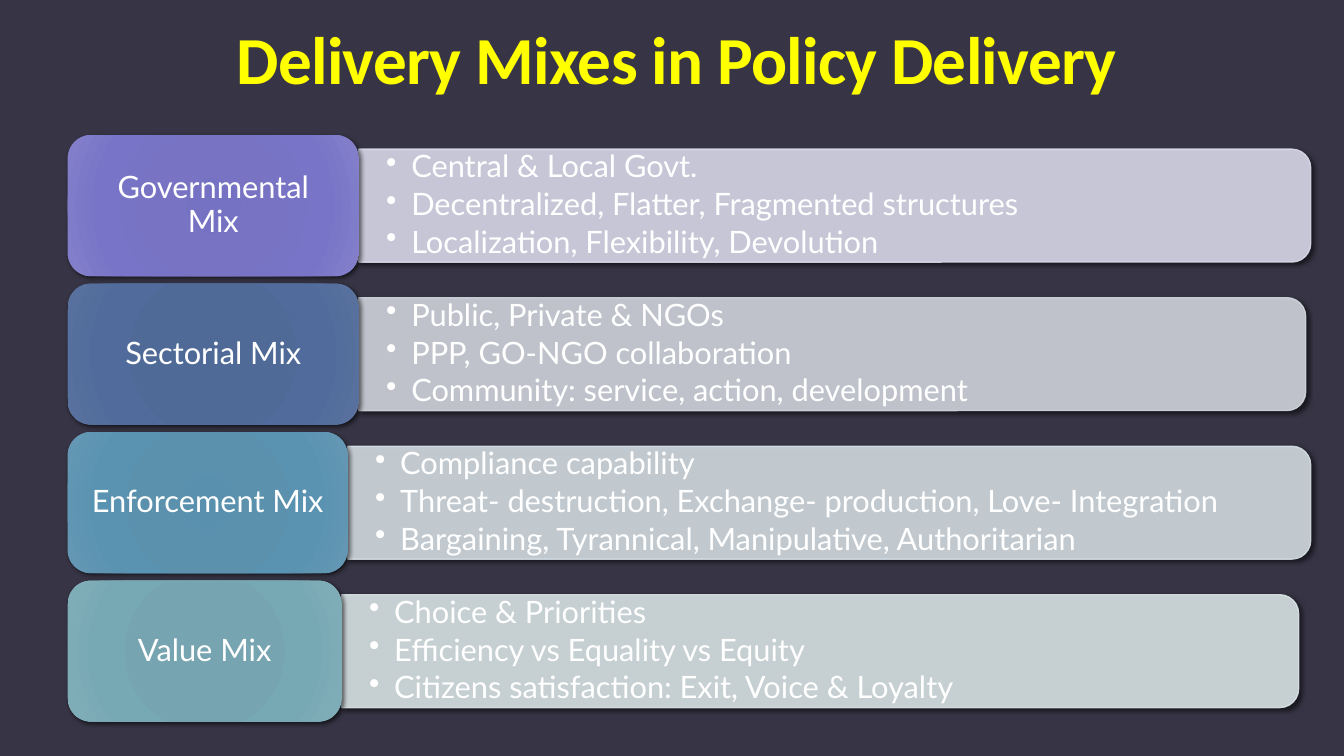
from pptx import Presentation
from pptx.dml.color import RGBColor
from pptx.enum.shapes import MSO_SHAPE
from pptx.enum.text import MSO_ANCHOR, PP_ALIGN
from pptx.oxml import parse_xml
from pptx.oxml.ns import nsdecls
from pptx.util import Inches, Pt

ROUNDED = MSO_SHAPE.ROUNDED_RECTANGLE
TOP_ROUNDED = MSO_SHAPE.ROUND_2_SAME_RECTANGLE
MIDDLE, BOTTOM = MSO_ANCHOR.MIDDLE, MSO_ANCHOR.BOTTOM
CENTER = PP_ALIGN.CENTER

COLORS = {"background": "373545", "title": "FFFF00", "text": "FFFFFF", "shadow": "000000"}
LEFT, FIRST_MIDDLE, ROW_PITCH = 0.67, 2.04, 1.4733
LABEL_HEIGHT, PANEL_HEIGHT, TEXT_HEIGHT = 1.4, 1.12, 1.01
STOPS = (0, 34, 70, 100)

MIXES = [
    ("Governmental Mix", 2.89, 9.44, "D9D9EB", ("7572C3", "7874C3", "7874C8", "8481CA"),
     ("Central & Local Govt.",
      "Decentralized, Flatter, Fragmented structures",
      "Localization, Flexibility, Devolution")),
    ("Sectorial Mix", 2.89, 9.39, "D2D5DE", ("4E6998", "506A98", "506B9C", "5A729D"),
     ("Public, Private & NGOs",
      "PPP, GO-NGO collaboration",
      "Community: service, action, development")),
    ("Enforcement Mix", 2.78, 9.55, "D4DDE3", ("5890AD", "5B91AD", "5A93B1", "6698B3"),
     ("Compliance capability",
      "Threat- destruction, Exchange- production, Love- Integration",
      "Bargaining, Tyrannical, Manipulative, Authoritarian")),
    ("Value Mix", 2.72, 9.49, "D9E3E5", ("74A4B1", "76A5B1", "77A9B5", "82AEB8"),
     ("Choice & Priorities",
      "Efficiency vs Equality vs Equity",
      "Citizens satisfaction: Exit, Voice & Loyalty")),
]


def cast_shadow(shape, blur):
    shape.shadow.inherit = False
    effects = shape._element.spPr.find("{*}effectLst")
    effects.append(parse_xml(
        f'<a:outerShdw {nsdecls("a")} blurRad="{Pt(blur)}" dist="{Pt(2)}" dir="2700000" '
        f'algn="br" rotWithShape="0"><a:srgbClr val="{COLORS["shadow"]}">'
        '<a:alpha val="60000"/></a:srgbClr></a:outerShdw>'))


def style_text(para, font, size, color, spacing):
    para.line_spacing = spacing
    for span in para.runs:
        span.font.name = font
        span.font.size = Pt(size)
        span.font.color.rgb = RGBColor.from_string(COLORS[color])


deck = Presentation()
deck.slide_width, deck.slide_height = Inches(13.33), Inches(7.5)
page = deck.slides.add_slide(deck.slide_layouts[6])
page.background.fill.solid()
page.background.fill.fore_color.rgb = RGBColor.from_string(COLORS["background"])

title = page.shapes.add_textbox(Inches(0.75), 0, Inches(11.92), Inches(1.02))
title.text_frame.word_wrap = True
title.text_frame.vertical_anchor = BOTTOM
title.text_frame.text = "Delivery Mixes in Policy Delivery"
heading = title.text_frame.paragraphs[0]
heading.alignment = CENTER
style_text(heading, "Calibri", 48, "title", 0.85)
heading.runs[0].font.bold = True
heading.runs[0].font._element.set("spc", "-50")

for row, (name, label_width, panel_width, tint, shades, points) in enumerate(MIXES):
    middle = FIRST_MIDDLE + row * ROW_PITCH
    panel_left = LEFT + label_width

    panel = page.shapes.add_shape(
        TOP_ROUNDED,
        Inches(panel_left + (panel_width - PANEL_HEIGHT) / 2), Inches(middle - panel_width / 2),
        Inches(PANEL_HEIGHT), Inches(panel_width))
    panel.rotation = 90
    panel.line.width = Pt(1)
    for paint in (panel.fill, panel.line.fill):
        paint.solid()
        paint.fore_color.rgb = RGBColor.from_string(tint)
    for color in panel._element.spPr.iter("{*}srgbClr"):
        color.append(parse_xml(f'<a:alpha {nsdecls("a")} val="90000"/>'))
    cast_shadow(panel, 3)

    box = page.shapes.add_textbox(
        Inches(panel_left), Inches(middle - TEXT_HEIGHT / 2),
        Inches(panel_width - 0.05), Inches(TEXT_HEIGHT))
    frame = box.text_frame
    frame.word_wrap = True
    frame.vertical_anchor = MIDDLE
    frame.margin_left = frame.margin_right = Inches(0.27)
    frame.margin_top = frame.margin_bottom = Inches(0.14)
    frame.text = "\n".join(points)
    for para in frame.paragraphs:
        style_text(para, "Lato", 22, "text", 0.9)
        para.level = 1
        para.space_after = Pt(3.3)
        layout = para._p.get_or_add_pPr()
        layout.set("marL", str(Inches(0.25)))
        layout.set("indent", str(-Inches(0.25)))
        layout.append(parse_xml(f'<a:buChar {nsdecls("a")} char="•"/>'))

    label = page.shapes.add_shape(
        ROUNDED, Inches(LEFT), Inches(middle - LABEL_HEIGHT / 2),
        Inches(label_width), Inches(LABEL_HEIGHT))
    label.fill.background()
    label.line.fill.background()
    cast_shadow(label, 3.5)
    stops = "".join(f'<a:gs pos="{stop * 1000}"><a:srgbClr val="{shade}"/></a:gs>'
                    for stop, shade in zip(STOPS, shades))
    properties = label._element.spPr
    properties.replace(properties.find("{*}noFill"), parse_xml(
        f'<a:gradFill {nsdecls("a")} rotWithShape="1"><a:gsLst>{stops}</a:gsLst>'
        '<a:path path="circle"><a:fillToRect l="100000" t="100000" r="100000" b="100000"/>'
        '</a:path></a:gradFill>'))
    frame = label.text_frame
    frame.word_wrap = True
    frame.vertical_anchor = MIDDLE
    frame.margin_left = frame.margin_right = Inches(0.15)
    frame.text = name
    frame.paragraphs[0].alignment = CENTER
    style_text(frame.paragraphs[0], "Lato", 22, "text", 0.9)

deck.save("out.pptx")
